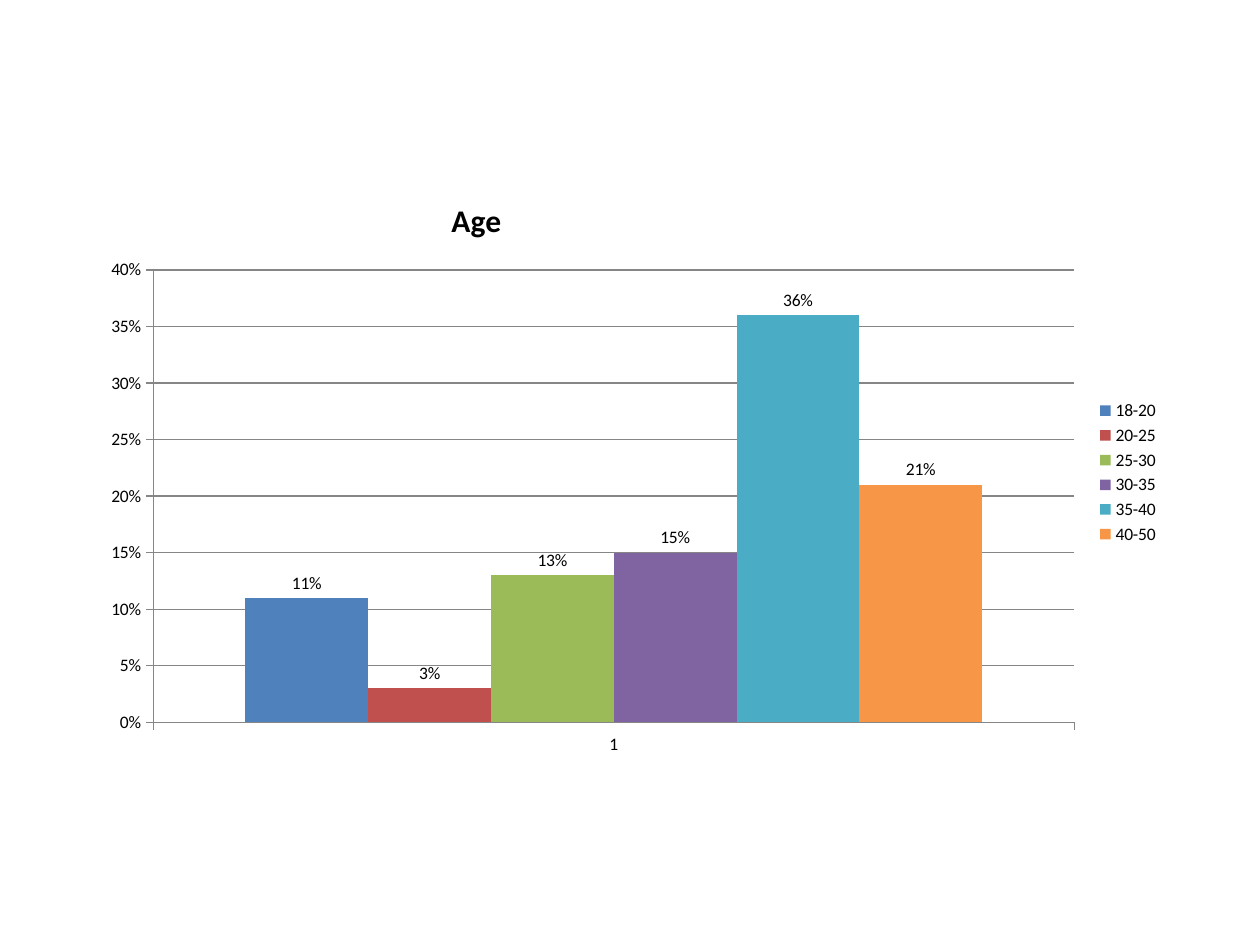
from lxml import etree
from pptx import Presentation
from pptx.chart.data import CategoryChartData
from pptx.dml.color import RGBColor
from pptx.enum.chart import (XL_CHART_TYPE, XL_LABEL_POSITION,
                             XL_LEGEND_POSITION, XL_TICK_MARK)
from pptx.oxml.ns import qn
from pptx.util import Inches, Pt

COLUMNS = XL_CHART_TYPE.COLUMN_CLUSTERED
ABOVE_BAR = XL_LABEL_POSITION.OUTSIDE_END
RIGHT = XL_LEGEND_POSITION.RIGHT
OUTSIDE = XL_TICK_MARK.OUTSIDE

BLACK = RGBColor(0x00, 0x00, 0x00)
GRAY = RGBColor(0x86, 0x86, 0x86)
BLUE = RGBColor(0x4F, 0x81, 0xBD)
RED = RGBColor(0xC0, 0x50, 0x4D)
GREEN = RGBColor(0x9B, 0xBB, 0x59)
PURPLE = RGBColor(0x80, 0x64, 0xA2)
TEAL = RGBColor(0x4B, 0xAC, 0xC6)
ORANGE = RGBColor(0xF7, 0x96, 0x46)

AGE_GROUPS = [
    ("18-20", 0.11, BLUE),
    ("20-25", 0.03, RED),
    ("25-30", 0.13, GREEN),
    ("30-35", 0.15, PURPLE),
    ("35-40", 0.36, TEAL),
    ("40-50", 0.21, ORANGE),
]


def set_layout(part, index, **settings):
    """Place a chart part by hand; index is where c:layout belongs in it."""
    layout = part.find(qn("c:layout"))
    if layout is None:
        layout = etree.Element(qn("c:layout"))
        part.insert(index, layout)
    manual = etree.SubElement(layout, qn("c:manualLayout"))
    for tag, value in settings.items():
        etree.SubElement(manual, qn(f"c:{tag}")).set("val", str(value))


class SlideBuilder:
    font = "Calibri"
    text_size = Pt(10)
    title_size = Pt(18)
    percent = "0%"

    def __init__(self, presentation):
        self.width = presentation.slide_width
        self.height = presentation.slide_height
        self.slide = presentation.slides.add_slide(presentation.slide_layouts[6])

    def column_chart(self, title, category, groups, left, top, width, height):
        """Add a chart with one series per group, placed by slide shares."""
        data = CategoryChartData(number_format=self.percent)
        data.categories = [category]
        for name, share, _ in groups:
            data.add_series(name, [share])
        chart = self.slide.shapes.add_chart(
            COLUMNS, int(left * self.width), int(top * self.height),
            int(width * self.width), int(height * self.height), data).chart
        chart.font.name = self.font
        chart.font.size = self.text_size
        chart.font.color.rgb = BLACK
        chart.has_legend = True
        chart.legend.position = RIGHT
        chart.legend.include_in_layout = False
        self.chart_title(chart, title)
        self.axes(chart)
        self.bars(chart.plots[0], groups)
        set_layout(chart.plots[0]._element.getparent(), 0, layoutTarget="inner",
                   xMode="edge", yMode="edge", x=0.06, y=0.16, w=0.85, h=0.76)

    def chart_title(self, chart, text):
        chart.has_title = True
        heading = chart.chart_title.text_frame.paragraphs[0]
        heading.text = text
        heading.font.name = self.font
        heading.font.size = self.title_size
        heading.font.bold = True
        heading.font.color.rgb = BLACK
        set_layout(chart.chart_title._element, 1,
                   xMode="edge", yMode="edge", x=0.33, y=0.03)

    def axes(self, chart):
        shares = chart.value_axis
        shares.minimum_scale, shares.maximum_scale = 0, 0.4
        shares.major_unit = 0.05
        shares.has_major_gridlines = True
        shares.tick_labels.number_format = self.percent
        shares.tick_labels.number_format_is_linked = False
        for axis in (chart.category_axis, shares):
            axis.major_tick_mark = OUTSIDE
            axis.format.line.color.rgb = GRAY
        shares.major_gridlines.format.line.color.rgb = GRAY

    def bars(self, plot, groups):
        plot.gap_width = 150
        plot.overlap = 0
        plot.vary_by_categories = False
        for series, (_, _, color) in zip(plot.series, groups):
            series.format.fill.solid()
            series.format.fill.fore_color.rgb = color
            labels = series.data_labels
            labels.show_value = True
            labels.number_format = self.percent
            labels.number_format_is_linked = False
            labels.position = ABOVE_BAR


def main():
    presentation = Presentation()
    presentation.slide_width = Inches(10)
    presentation.slide_height = Inches(7.5)
    builder = SlideBuilder(presentation)
    builder.column_chart("Age", "1", AGE_GROUPS,
                         left=0.07, top=0.185, width=0.86, height=0.63)
    presentation.save("out.pptx")


if __name__ == "__main__":
    main()
